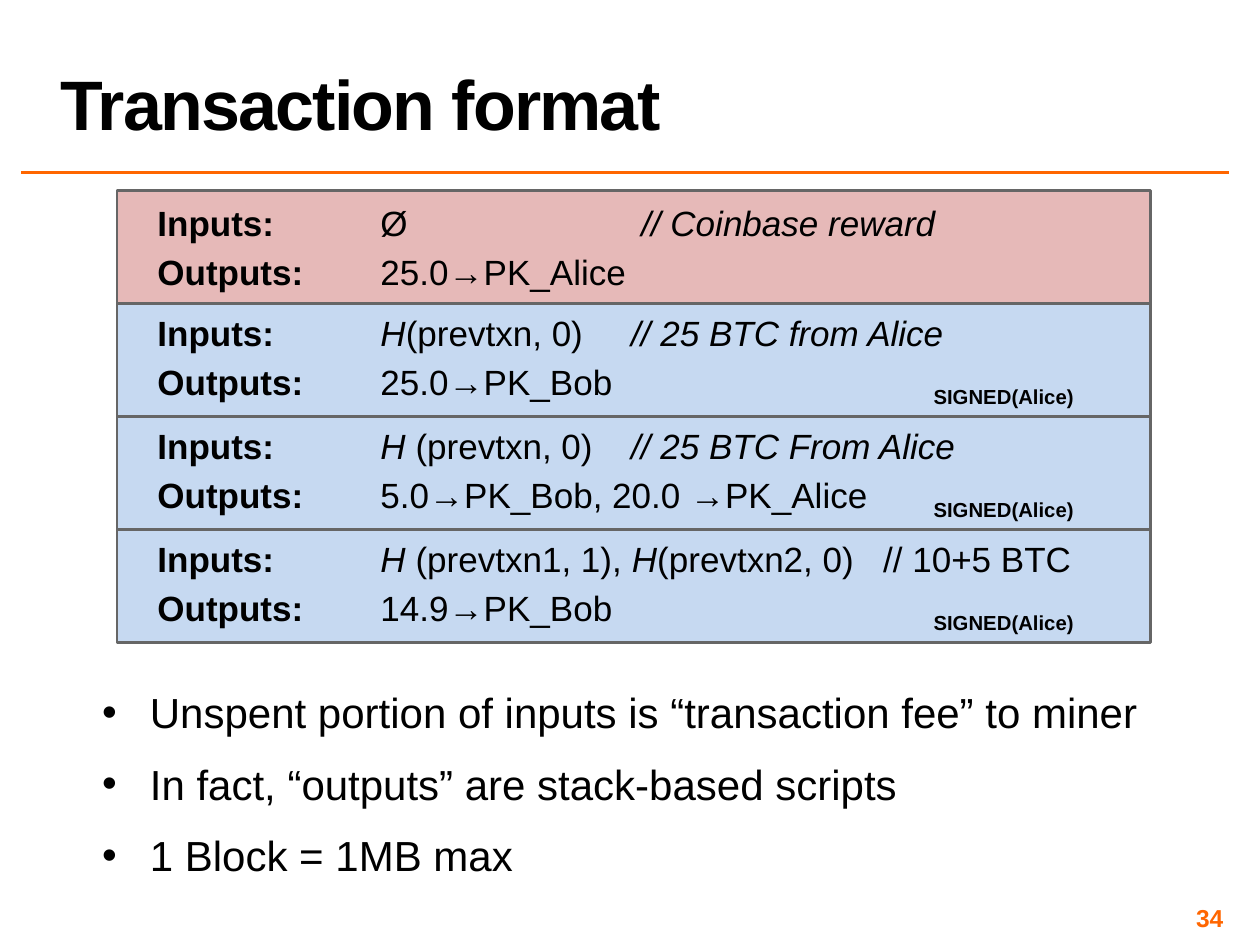
from lxml.etree import SubElement
from pptx import Presentation
from pptx.dml.color import RGBColor
from pptx.enum.shapes import MSO_CONNECTOR, MSO_SHAPE
from pptx.enum.text import MSO_ANCHOR, MSO_AUTO_SIZE, PP_ALIGN
from pptx.oxml.ns import qn
from pptx.util import Pt

SCALE = 9144
FONT = "Arial"
COLORS = {"ink": "000000", "accent": "FF6600", "border": "666666",
          "coinbase": "E6B9B8", "transfer": "C6D9F1"}
BOLD, ITALIC = {"bold": True}, {"italic": True}
SIGNATURE = ("\tSIGNED(Alice)", {"bold": True, "baseline": -25})
TRANSACTIONS = [
    ("coinbase", 384, [("Ø", {}), ("\t// Coinbase reward", ITALIC)],
     [("25.0→PK_Alice", {})]),
    ("transfer", 376, [("H", ITALIC), ("(prevtxn, 0)", {}), ("\t// 25 BTC from Alice", ITALIC)],
     [("25.0→PK_Bob", {}), SIGNATURE]),
    ("transfer", 376, [("H ", ITALIC), ("(prevtxn, 0)", {}), ("\t// 25 BTC From Alice", ITALIC)],
     [("5.0→PK_Bob, 20.0 →PK_Alice", {}), SIGNATURE]),
    ("transfer", 576, [("H ", ITALIC), ("(prevtxn1, 1), ", {}), ("H", ITALIC),
                       ("(prevtxn2, 0)\t// 10+5 BTC", {})],
     [("14.9→PK_Bob", {}), SIGNATURE]),
]
NOTES = ["Unspent portion of inputs is “transaction fee” to miner",
         "In fact, “outputs” are stack-based scripts", "1 Block = 1MB max"]


def px(length):
    """Turn px into EMU."""
    return int(length * SCALE)


def rgb(name):
    """Look up a named colour."""
    return RGBColor.from_string(COLORS[name])


def place(shape, box):
    """Move a shape to a (left, top, width, height) box."""
    shape.left, shape.top, shape.width, shape.height = map(px, box)


def set_frame(frame, anchor, left=10, other=10):
    """Set the wrapping, anchor and insets of a text frame."""
    frame.word_wrap = True
    frame.auto_size = MSO_AUTO_SIZE.NONE
    frame.vertical_anchor = anchor
    frame.margin_left = px(left)
    frame.margin_top = frame.margin_right = frame.margin_bottom = px(other)


def add_text(para, text, size=20, color="ink", bold=False, italic=False,
             baseline=0, spacing=0):
    """Append one formatted span to a paragraph."""
    span = para.add_run()
    span.text = text
    font = span.font
    font.name, font.size, font.bold, font.italic = FONT, Pt(size), bold, italic
    font.color.rgb = rgb(color)
    properties = span._r.get_or_add_rPr()
    if baseline:
        properties.set("baseline", str(baseline * 1000))
    if spacing:
        properties.set("spc", str(spacing * 100))


def next_paragraph(frame, index, space, align=PP_ALIGN.LEFT):
    """Return the paragraph at an index, adding it after the first."""
    para = frame.add_paragraph() if index else frame.paragraphs[0]
    para.alignment = align
    para.space_before = para.space_after = Pt(space)
    return para


def add_tab_stops(para, stops):
    """Give a paragraph left tab stops in px."""
    tabs = SubElement(para._p.get_or_add_pPr(), qn("a:tabLst"))
    for stop in stops:
        SubElement(tabs, qn("a:tab"), pos=str(px(stop)), algn="l")


def add_header(page, box):
    """Fill the title and draw the rule below it."""
    left, top, width, height = box
    title = page.shapes.title
    place(title, box)
    set_frame(title.text_frame, MSO_ANCHOR.BOTTOM, other=5)
    para = next_paragraph(title.text_frame, 0, 0)
    para.line_spacing = 0.8
    add_text(para, "Transaction format", size=40, bold=True, spacing=-1)
    rule_top = top + height + 18
    rule = page.shapes.add_connector(MSO_CONNECTOR.STRAIGHT, px(left - 21), px(rule_top),
                                     px(left + width), px(rule_top))
    rule.line.color.rgb = rgb("accent")
    rule.line.width = Pt(2)
    SubElement(rule._element.spPr, qn("a:effectLst"))


def add_transaction(page, box, fill, comment_stop, inputs, outputs):
    """Draw one transaction with its inputs and outputs."""
    block = page.shapes.add_shape(MSO_SHAPE.RECTANGLE, *map(px, box))
    block.shadow.inherit = False
    block.fill.solid()
    block.fill.fore_color.rgb = rgb(fill)
    block.line.color.rgb = rgb("border")
    block.line.width = Pt(1.5)
    frame = block.text_frame
    set_frame(frame, MSO_ANCHOR.MIDDLE, left=32)
    lines = [("Inputs:", inputs, comment_stop), ("Outputs:", outputs, 616)]
    for index, (label, spans, stop) in enumerate(lines):
        para = next_paragraph(frame, index, 2)
        add_tab_stops(para, [177, stop])
        add_text(para, label + "\t", **BOLD)
        for text, style in spans:
            add_text(para, text, **style)


def add_ledger(page, box):
    """Stack the transactions in equal rows."""
    left, top, width, height = box
    row_height = height / len(TRANSACTIONS)
    for index, transaction in enumerate(TRANSACTIONS):
        row = (left, top + index * row_height, width, row_height)
        add_transaction(page, row, *transaction)


def add_notes_list(page, box):
    """Fill the body placeholder with the bulleted list."""
    body = page.placeholders[1]
    place(body, box)
    set_frame(body.text_frame, MSO_ANCHOR.TOP)
    for index, note in enumerate(NOTES):
        para = next_paragraph(body.text_frame, index, 6)
        properties = para._p.get_or_add_pPr()
        properties.set("marL", str(px(38)))
        properties.set("indent", str(px(-38)))
        SubElement(properties, qn("a:buFont"), typeface=FONT)
        SubElement(properties, qn("a:buChar"), char="•")
        add_text(para, note, size=24)


def add_page_number(page, box):
    """Write the page number at the right of its box."""
    frame = page.shapes.add_textbox(*map(px, box)).text_frame
    set_frame(frame, MSO_ANCHOR.MIDDLE, left=4, other=4)
    para = next_paragraph(frame, 0, 0, PP_ALIGN.RIGHT)
    add_text(para, "34", size=14, color="accent", bold=True)


def main():
    """Build and save the deck."""
    deck = Presentation()
    deck.slide_width, deck.slide_height = px(1000), px(750)
    page = deck.slides.add_slide(deck.slide_layouts[1])
    add_header(page, (38, 2, 937, 117))
    add_ledger(page, (93, 151, 820, 359))
    add_notes_list(page, (71, 535, 909, 137))
    add_page_number(page, (742, 717, 233, 23))
    deck.save("out.pptx")


if __name__ == "__main__":
    main()
